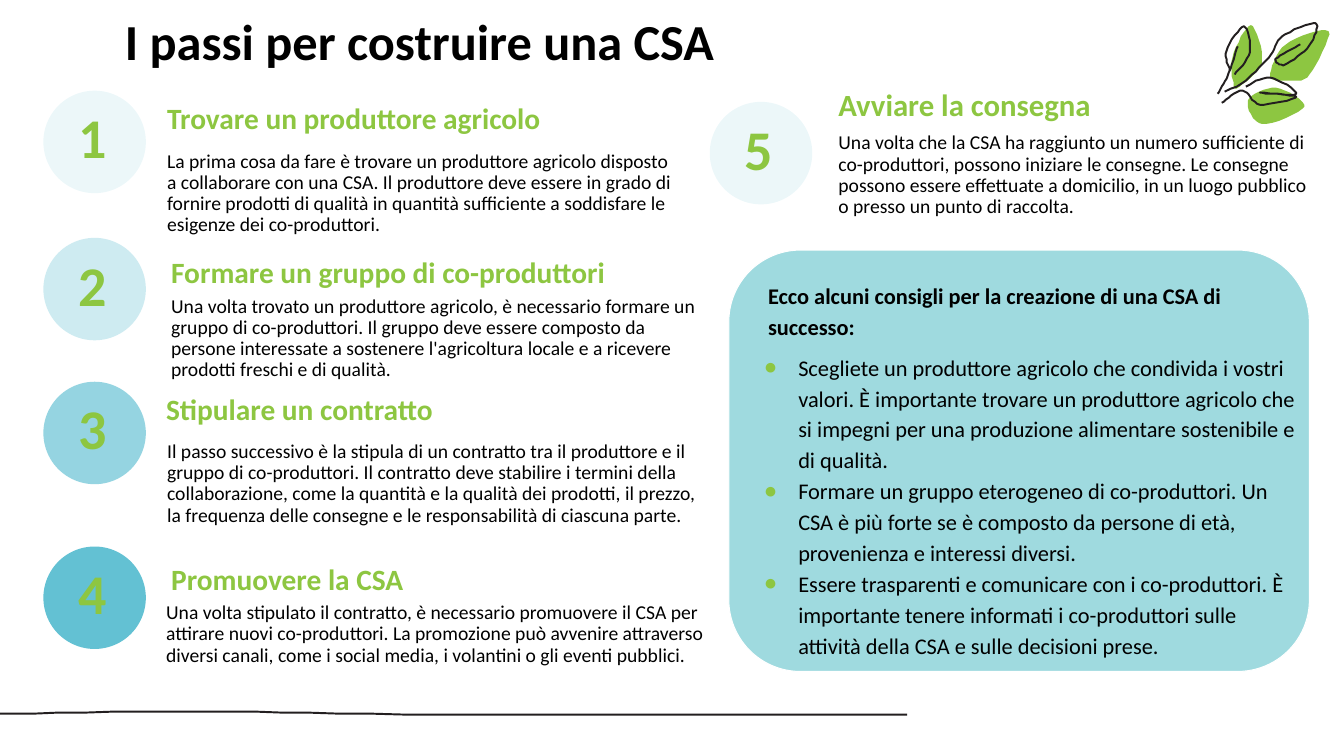
from dataclasses import dataclass

from lxml import etree
from pptx import Presentation, util as u
from pptx.dml.color import RGBColor
from pptx.enum import shapes, text
from pptx.oxml import ns

GREEN = RGBColor(0x8D, 0xC6, 0x41)
TEAL = RGBColor(0x63, 0xC1, 0xD3)
PALE_TEAL = RGBColor(0x9F, 0xDA, 0xDF)
BLACK = RGBColor(0, 0, 0)
WHITE = RGBColor(0xFF, 0xFF, 0xFF)
INK = RGBColor(0x23, 0x1F, 0x20)
FONT = "Calibri"
DRAWING_UNIT = u.Pt(0.72)
SPRIG_LEFT = 864
CIRCLE_SIZE = 73.2
NUMBER_OFFSET = (17.8, 1.5)

Point = tuple[float, float]


@dataclass(frozen=True)
class Step:
    circle: Point
    opacity: int
    heading: Point
    title: str
    body: Point
    body_width: float
    description: str
    heading_size: float = 21


STEPS = [
    Step((31, 64.8), 12, (112.3, 70.6), "Trovare un produttore agricolo", (112.3, 104.4), 382.3,
         "La prima cosa da fare è trovare un produttore agricolo disposto a collaborare con una CSA. "
         "Il produttore deve essere in grado di fornire prodotti di qualità in quantità sufficiente "
         "a soddisfare le esigenze dei co-produttori."),
    Step((31, 169.9), 31, (115.2, 180.7), "Formare un gruppo di co-produttori", (115.2, 208.1), 396,
         "Una volta trovato un produttore agricolo, è necessario formare un gruppo di co-produttori. "
         "Il gruppo deve essere composto da persone interessate a sostenere l'agricoltura locale "
         "e a ricevere prodotti freschi e di qualità."),
    Step((31, 272.7), 68, (111.6, 278.6), "Stipulare un contratto", (112.3, 311.8), 398.9,
         "Il passo successivo è la stipula di un contratto tra il produttore e il gruppo di "
         "co-produttori. Il contratto deve stabilire i termini della collaborazione, come la quantità "
         "e la qualità dei prodotti, il prezzo, la frequenza delle consegne e le responsabilità "
         "di ciascuna parte."),
    Step((31, 390.4), 100, (115.2, 400.3), "Promuovere la CSA", (111.6, 427), 398.9,
         "Una volta stipulato il contratto, è necessario promuovere il CSA per attirare nuovi "
         "co-produttori. La promozione può avvenire attraverso diversi canali, come i social media, "
         "i volantini o gli eventi pubblici."),
    Step((507, 72.8), 12, (591.8, 60.5), "Avviare la consegna", (591.8, 91.4), 351.4,
         "Una volta che la CSA ha raggiunto un numero sufficiente di co-produttori, possono iniziare "
         "le consegne. Le consegne possono essere effettuate a domicilio, in un luogo pubblico "
         "o presso un punto di raccolta.", 22),
]

ADVICE_HEADING = "Ecco alcuni consigli per la creazione di una CSA di successo:"
ADVICE = [
    "Scegliete un produttore agricolo che condivida i vostri valori. È importante trovare un "
    "produttore agricolo che si impegni per una produzione alimentare sostenibile e di qualità.",
    "Formare un gruppo eterogeneo di co-produttori. Un CSA è più forte se è composto da persone "
    "di età, provenienza e interessi diversi.",
    "Essere trasparenti e comunicare con i co-produttori. È importante tenere informati i "
    "co-produttori sulle attività della CSA e sulle decisioni prese.",
]

GROUND_LINE = [(0, 708), (200, 706), (443, 709), (900, 709)]
LEAVES = [
    [(30, 86), (52, 62), (41, 25), (23, 56), (24, 84)],
    [(60, 76), (82, 80), (99, 74), (118, 31), (76, 44)],
    [(94, 106), (52, 123), (38, 100), (66, 87)],
]
SPRIG_STROKES = [
    [(8, 93), (18, 75), (28, 46)],
    [(20, 70), (17, 50), (34, 26), (40, 52), (25, 74)],
    [(15, 91), (36, 80), (61, 54), (72, 36), (105, 23), (99, 45), (75, 64), (66, 58), (90, 44)],
    [(12, 102), (33, 90), (50, 104), (86, 96), (50, 92), (86, 93), (60, 77), (36, 86)],
]


def smooth(points: list[Point], closed: bool, divisions: int = 8) -> list[Point]:
    ends = (points[-1:], points[:2]) if closed else (points[:1], points[-1:])
    padded = ends[0] + points + ends[1]
    result = [points[0]]
    for index in range(len(padded) - 3):
        for step in range(1, divisions + 1):
            t = step / divisions
            result.append(tuple(
                b + t * (c - a + t * (2 * a - 5 * b + 4 * c - d + t * (3 * b - a - 3 * c + d))) / 2
                for a, b, c, d in zip(*padded[index:index + 4])))
    return result


def paint(shape, color: RGBColor, opacity: int = 100) -> None:
    shape.shadow.inherit = False
    shape.fill.solid()
    shape.fill.fore_color.rgb = color
    shape.line.fill.background()
    if opacity < 100:
        color_element = shape.element.spPr.find(ns.qn("a:solidFill"))[0]
        etree.SubElement(color_element, ns.qn("a:alpha")).set("val", str(opacity * 1000))


def draw_curves(container, curves: list[list[Point]], closed: bool, left: float = 0):
    builder = container.build_freeform(*curves[0][0], scale=DRAWING_UNIT)
    for curve in curves:
        builder.move_to(*curve[0])
        builder.add_line_segments(smooth(curve, closed)[1:], close=closed)
    return builder.convert_to_shape(u.Pt(left), u.Pt(0))


def draw_strokes(container, curves: list[list[Point]], left: float = 0) -> None:
    shape = draw_curves(container, curves, False, left)
    shape.shadow.inherit = False
    shape.fill.background()
    shape.line.color.rgb = INK
    shape.line.width = u.Pt(1.4)


def format_frame(frame, inset: float) -> None:
    frame.word_wrap = True
    frame.auto_size = text.MSO_AUTO_SIZE.NONE
    frame.vertical_anchor = text.MSO_ANCHOR.TOP
    frame.margin_left = frame.margin_right = u.Pt(7.2)
    frame.margin_top = frame.margin_bottom = u.Pt(inset)


def format_paragraph(paragraph, size: float, color: RGBColor, bold: bool, spacing: float) -> None:
    paragraph.alignment = text.PP_ALIGN.LEFT
    paragraph.line_spacing = spacing
    paragraph.space_before = u.Pt(0)
    for run in paragraph.runs:
        run.font.name = FONT
        run.font.size = u.Pt(size)
        run.font.bold = bold
        run.font.color.rgb = color


def add_label(slide, position: Point, size: Point, content: str, font_size: float,
              color: RGBColor, bold: bool, spacing: float = 0.9, inset: float = 3.6) -> None:
    shape = slide.shapes.add_textbox(*map(u.Pt, position + size))
    format_frame(shape.text_frame, inset)
    shape.text_frame.text = content
    format_paragraph(shape.text_frame.paragraphs[0], font_size, color, bold, spacing)


def place(shape, left: float, top: float, width: float, height: float) -> None:
    shape.left, shape.top, shape.width, shape.height = map(u.Pt, (left, top, width, height))


def set_bullet(paragraph, left: float, indent: float, bullet: str = "") -> None:
    properties = paragraph._p.get_or_add_pPr()
    properties.set("marL", str(u.Pt(left)))
    properties.set("indent", str(u.Pt(indent)))
    if not bullet:
        etree.SubElement(properties, ns.qn("a:buNone"))
        return
    color = etree.SubElement(properties, ns.qn("a:buClr"))
    etree.SubElement(color, ns.qn("a:srgbClr")).set("val", str(GREEN))
    etree.SubElement(properties, ns.qn("a:buChar")).set("char", bullet)


def add_advice(slide) -> None:
    body = slide.placeholders[1]
    place(body, 527, 191.5, 405.4, 301)
    card = slide.shapes.add_shape(shapes.MSO_SHAPE.ROUNDED_RECTANGLE,
                                  *map(u.Pt, (520.6, 178.6, 414.7, 301)))
    card.adjustments[0] = 0.17
    paint(card, PALE_TEAL)
    card.line.color.rgb = WHITE
    card.line.width = u.Pt(0.75)
    body.element.addprevious(card.element)
    format_frame(body.text_frame, 7.2)
    body.text_frame.text = "\n".join([ADVICE_HEADING, *ADVICE])
    for index, paragraph in enumerate(body.text_frame.paragraphs):
        if index:
            set_bullet(paragraph, 36, -24.5, "●")
        else:
            set_bullet(paragraph, 14.4, 0)
            paragraph.space_after = u.Pt(7)
        format_paragraph(paragraph, 16, BLACK, index == 0, 1.15)


def add_step(slide, number: int, step: Step) -> None:
    circle = slide.shapes.add_shape(shapes.MSO_SHAPE.OVAL,
                                    *map(u.Pt, step.circle + (CIRCLE_SIZE, CIRCLE_SIZE)))
    paint(circle, TEAL, step.opacity)
    number_position = tuple(map(sum, zip(step.circle, NUMBER_OFFSET)))
    add_label(slide, number_position, (50.4, CIRCLE_SIZE), str(number), 40, GREEN, True, 1, 7.2)
    add_label(slide, step.heading, (412.6, 26.6), step.title, step.heading_size, GREEN, True)
    add_label(slide, step.body, (step.body_width, 78.5), step.description, 14, BLACK, False)


def main() -> None:
    presentation = Presentation()
    presentation.slide_width, presentation.slide_height = u.Pt(960), u.Pt(540)
    slide = presentation.slides.add_slide(presentation.slide_layouts[1])
    draw_strokes(slide.shapes, [GROUND_LINE])
    title = slide.shapes.title
    place(title, 82, 0, 473, 41.8)
    format_frame(title.text_frame, 7.2)
    title.text_frame.text = "I passi per costruire una CSA"
    format_paragraph(title.text_frame.paragraphs[0], 36, BLACK, True, 1)
    add_advice(slide)
    for number, step in enumerate(STEPS, 1):
        add_step(slide, number, step)
    sprig = slide.shapes.add_group_shape()
    for leaf in LEAVES:
        paint(draw_curves(sprig.shapes, [leaf], True, SPRIG_LEFT), GREEN)
    draw_strokes(sprig.shapes, SPRIG_STROKES, SPRIG_LEFT)
    presentation.save("out.pptx")


if __name__ == "__main__":
    main()
